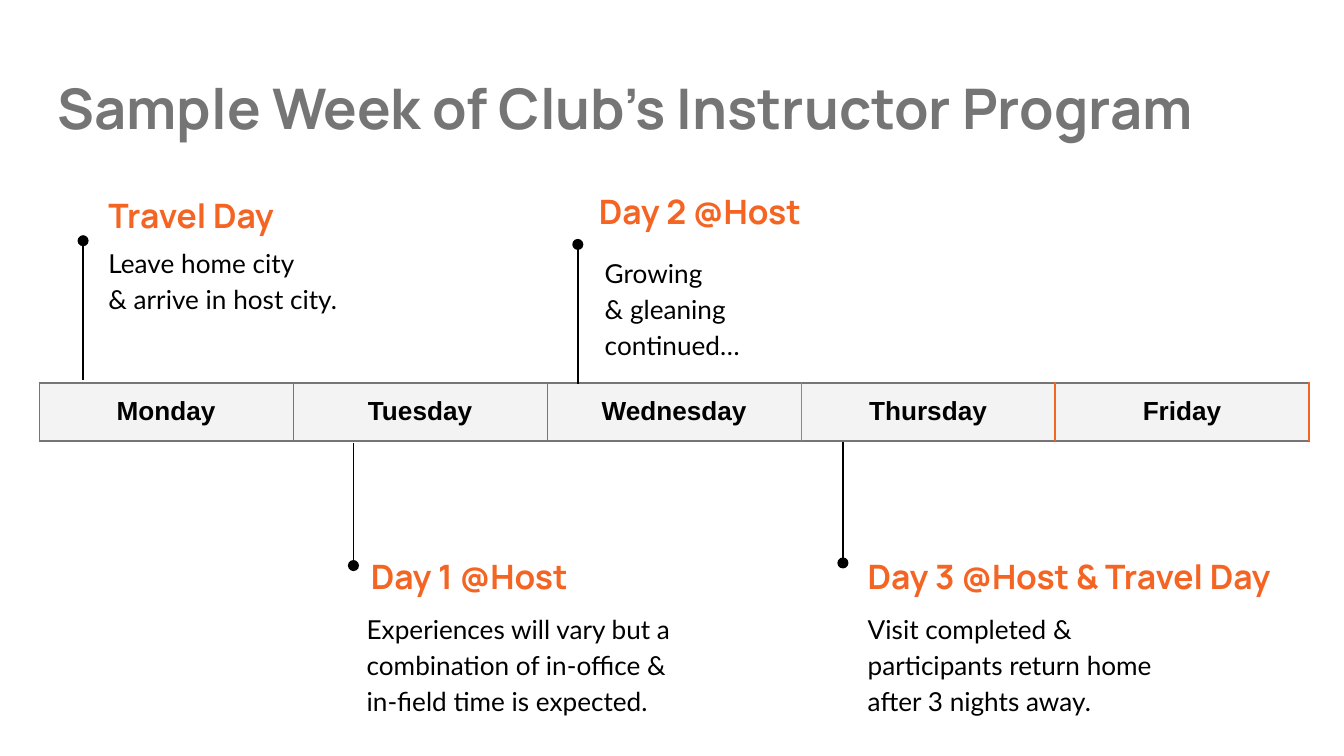
from typing import NamedTuple

from lxml import etree
from pptx import Presentation
from pptx.dml.color import RGBColor
from pptx.enum.shapes import MSO_CONNECTOR
from pptx.enum.text import MSO_ANCHOR, PP_ALIGN
from pptx.oxml.ns import qn
from pptx.util import Cm, Pt

STRAIGHT = MSO_CONNECTOR.STRAIGHT
TOP, MIDDLE = MSO_ANCHOR.TOP, MSO_ANCHOR.MIDDLE
CENTER = PP_ALIGN.CENTER

COLORS = {
    "title": "757575",
    "accent": "F46524",
    "text": "000000",
    "cell": "F3F3F3",
    "border": "757575",
}
INSET = Cm(0.25)
LINE_WIDTH = Pt(0.75)
BLANK_LAYOUT = 6


class Area(NamedTuple):
    """Left, top, width and height in centimetres."""
    left: float
    top: float
    width: float
    height: float


class Style(NamedTuple):
    font: str
    size: int
    color: str
    bold: bool
    spacing: float = 1.0


class Marker(NamedTuple):
    """Vertical line from the week bar to a dot, in centimetres."""
    x: float
    bar_end: float
    dot_end: float


class Event(NamedTuple):
    heading: str
    heading_area: Area
    lines: list[str]
    body_area: Area
    marker: Marker


TITLE = Style("Manrope", 30, "title", True)
HEADING = Style("Manrope", 18, "accent", True)
BODY = Style("Lato", 14, "text", False, 1.15)
DAY = Style("Arial", 14, "text", True)

DAYS = ["Monday", "Tuesday", "Wednesday", "Thursday", "Friday"]
FIRST_ACCENT_DAY = 3
WEEK_AREA = Area(0.74, 7.24, 24, 1.08)

EVENTS = [
    Event("Travel Day", Area(1.8, 3.53, 6.43, 1.09),
          ["Leave home city", "& arrive in host city."],
          Area(1.8, 4.34, 4.93, 1.6), Marker(1.57, 7.19, 4.55)),
    Event("Day 1 @Host", Area(6.76, 10.34, 9.02, 1.09),
          ["Experiences will vary but a combination of in-office & "
           "in-field time is expected."],
          Area(6.68, 11.25, 6.53, 1.6), Marker(6.68, 8.38, 10.69)),
    Event("Day 2 @Host", Area(11.07, 3.45, 6.43, 1.09),
          ["Growing", "& gleaning continued…"],
          Area(11.18, 4.52, 3.73, 1.6), Marker(10.92, 7.26, 4.62)),
    Event("Day 3 @Host & Travel Day", Area(16.15, 10.34, 9.02, 1.09),
          ["Visit completed &", "participants return home after 3 nights away."],
          Area(16.15, 11.25, 6.17, 1.6), Marker(15.93, 8.36, 10.64)),
]


def rgb(name: str) -> RGBColor:
    return RGBColor.from_string(COLORS[name])


def write(para, lines: list[str], style: Style) -> None:
    para.line_spacing = style.spacing
    for index, line in enumerate(lines):
        if index:
            para.add_line_break()
        span = para.add_run()
        span.text = line
        span.font.name = style.font
        span.font.size = Pt(style.size)
        span.font.bold = style.bold
        span.font.color.rgb = rgb(style.color)


def add_text(page, area: Area, lines: list[str], style: Style, anchor=TOP) -> None:
    box = page.shapes.add_textbox(*map(Cm, area))
    frame = box.text_frame
    frame.word_wrap = True
    frame.vertical_anchor = anchor
    frame.margin_left = frame.margin_right = INSET
    frame.margin_top = frame.margin_bottom = INSET
    write(frame.paragraphs[0], lines, style)


def add_marker(page, marker: Marker) -> None:
    x = Cm(marker.x)
    line = page.shapes.add_connector(
        STRAIGHT, x, Cm(marker.bar_end), x, Cm(marker.dot_end))
    line.line.color.rgb = rgb("text")
    line.line.width = LINE_WIDTH
    etree.SubElement(line.line._get_or_add_ln(), qn("a:tailEnd"), type="oval")
    etree.SubElement(line._element.spPr, qn("a:effectLst"))


def add_border(cell, side: str, color: str) -> None:
    """Draw one cell edge; call in the order L, R, T, B and before the fill."""
    props = cell._tc.get_or_add_tcPr()
    edge = etree.SubElement(props, qn(f"a:ln{side}"), w=str(LINE_WIDTH))
    fill = etree.SubElement(edge, qn("a:solidFill"))
    etree.SubElement(fill, qn("a:srgbClr"), val=COLORS[color])


def add_week(page) -> None:
    table = page.shapes.add_table(1, len(DAYS), *map(Cm, WEEK_AREA)).table
    table.first_row = table.horz_banding = False
    for index, day in enumerate(DAYS):
        table.columns[index].width = Cm(WEEK_AREA.width / len(DAYS))
        cell = table.cell(0, index)
        left = "accent" if index >= FIRST_ACCENT_DAY else "border"
        right = "accent" if index + 1 >= FIRST_ACCENT_DAY else "border"
        for side, color in zip("LRTB", (left, right, "border", "border")):
            add_border(cell, side, color)
        cell.fill.solid()
        cell.fill.fore_color.rgb = rgb("cell")
        cell.margin_left = cell.margin_right = INSET
        cell.margin_top = cell.margin_bottom = INSET
        para = cell.text_frame.paragraphs[0]
        para.alignment = CENTER
        write(para, [day], DAY)


def main() -> None:
    deck = Presentation()
    deck.slide_width, deck.slide_height = Cm(25.4), Cm(14.29)
    page = deck.slides.add_slide(deck.slide_layouts[BLANK_LAYOUT])
    add_text(page, Area(0.84, 1.14, 23.67, 1.78),
             ["Sample Week of Club’s Instructor Program"], TITLE)
    add_week(page)
    for event in EVENTS:
        add_marker(page, event.marker)
        add_text(page, event.heading_area, [event.heading], HEADING, MIDDLE)
        add_text(page, event.body_area, event.lines, BODY)
    deck.save("out.pptx")


if __name__ == "__main__":
    main()
